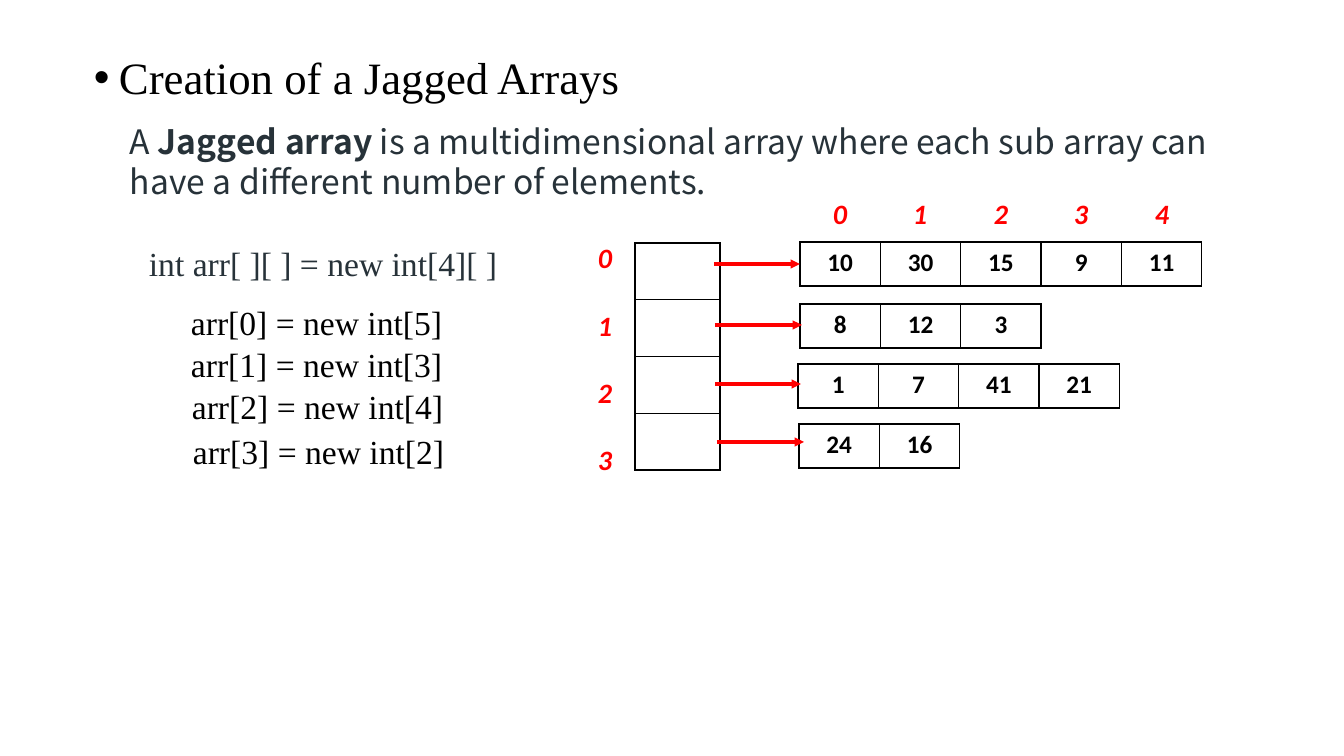
from lxml import etree
from pptx import Presentation
from pptx.dml.color import RGBColor
from pptx.enum.shapes import MSO_CONNECTOR
from pptx.enum.text import MSO_ANCHOR, PP_ALIGN
from pptx.oxml.ns import qn
from pptx.util import Emu, Pt

BLACK = RGBColor(0x00, 0x00, 0x00)
SLATE = RGBColor(0x27, 0x32, 0x39)
RED = RGBColor(0xFF, 0x00, 0x00)
SERIF = "Times New Roman"
SANS = "Noto Sans CJK JP"
LABEL = "Calibri"
CENTER = PP_ALIGN.CENTER
LEFT = PP_ALIGN.LEFT
TOP = MSO_ANCHOR.TOP
MIDDLE = MSO_ANCHOR.MIDDLE
STRAIGHT = MSO_CONNECTOR.STRAIGHT


def px(length):
    return Emu(round(length * 914400 / 100.8))


CELL_WIDTH = px(402) // 5
CELL_HEIGHT = 44
ARRAY_LEFT = 800
ROWS = [
    (["10", "30", "15", "9", "11"], 800, 242, 714, 264, 800),
    (["8", "12", "3"], 800, 304, 715, 325, 802),
    (["1", "7", "41", "21"], 798, 364, 715, 384, 801),
    (["24", "16"], 799, 424, 717, 442, 804),
]
ALLOCATIONS = [(5, 181, 297), (3, 181, 339), (4, 182, 381), (2, 183, 426)]


def write_paragraph(paragraph, runs, font=SERIF, size=24, color=BLACK,
                    italic=False, align=LEFT):
    paragraph.alignment = align
    for text, bold in runs:
        run = paragraph.add_run()
        run.text = text
        run.font.name = font
        run.font.size = Pt(size)
        run.font.color.rgb = color
        run.font.bold = bold
        run.font.italic = italic


def add_text(slide, box, paragraphs, anchor=TOP, line_spacing=None, gap=0, **style):
    shape = slide.shapes.add_textbox(*map(px, box))
    frame = shape.text_frame
    frame.word_wrap = True
    frame.vertical_anchor = anchor
    for index, runs in enumerate(paragraphs):
        paragraph = frame.add_paragraph() if index else frame.paragraphs[0]
        if line_spacing:
            paragraph.line_spacing = line_spacing
        if index:
            paragraph.space_before = Pt(gap)
        write_paragraph(paragraph, runs, **style)
    return shape


def add_title(slide, box):
    shape = add_text(slide, box, [[("Creation of a Jagged Arrays", False)]],
                     anchor=MIDDLE, line_spacing=0.9, size=32)
    properties = shape.text_frame.paragraphs[0]._p.get_or_add_pPr()
    properties.set("marL", str(px(25)))
    properties.set("indent", str(-px(25)))
    bullet_font = etree.SubElement(properties, qn("a:buFont"))
    bullet_font.set("typeface", "Arial")
    etree.SubElement(properties, qn("a:buChar")).set("char", "•")


def add_definition(slide, box):
    runs = [
        ("A ", False),
        ("Jagged array", True),
        (" is a multidimensional array where each sub array can "
         "have a different number of elements.", False),
    ]
    add_text(slide, box, [runs], line_spacing=Pt(28.8), font=SANS, color=SLATE)


def add_code(slide, box):
    add_text(slide, box, [[("int arr[ ][ ] = new int[4][ ]", False)]], color=SLATE)
    for index, (length, left, top) in enumerate(ALLOCATIONS):
        add_text(slide, (left, top, 293, 50),
                 [[(f"arr[{index}] = new int[{length}]", False)]])


def outline_cell(cell):
    cell.fill.background()
    properties = cell._tc.get_or_add_tcPr()
    for index, side in enumerate(("a:lnL", "a:lnR", "a:lnT", "a:lnB")):
        border = etree.Element(qn(side), w=str(Pt(1)))
        fill = etree.SubElement(border, qn("a:solidFill"))
        etree.SubElement(fill, qn("a:srgbClr"), val=str(BLACK))
        properties.insert(index, border)


def add_grid(slide, left, top, column_width, row_height, rows):
    row_count, column_count = len(rows), len(rows[0])
    table = slide.shapes.add_table(
        row_count, column_count, px(left), px(top),
        column_width * column_count, row_height * row_count).table
    table.first_row = False
    table.horz_banding = False
    for column in table.columns:
        column.width = column_width
    for row, values in zip(table.rows, rows):
        row.height = row_height
        for cell, value in zip(row.cells, values):
            outline_cell(cell)
            if value:
                write_paragraph(cell.text_frame.paragraphs[0], [(value, True)],
                                font=LABEL, size=18, align=CENTER)


def add_arrow(slide, start, end, y):
    arrow = slide.shapes.add_connector(STRAIGHT, px(start), px(y), px(end), px(y))
    arrow.line.color.rgb = RED
    arrow.line.width = Pt(2.25)
    etree.SubElement(arrow.line._get_or_add_ln(), qn("a:tailEnd"), type="triangle")
    etree.SubElement(arrow._element.spPr, qn("a:effectLst"))


def add_array_diagram(slide, box):
    left, top, width, height = box
    label_style = {"font": LABEL, "size": 20, "color": RED, "italic": True}
    for values, row_left, row_top, *_ in ROWS:
        add_grid(slide, row_left, row_top, CELL_WIDTH, px(CELL_HEIGHT), [values])
    add_grid(slide, left, top, px(width), px(height) // len(ROWS), [[""]] * len(ROWS))
    for _, _, _, start, y, end in ROWS:
        add_arrow(slide, start, end, y)
    for index in range(len(ROWS[0][0])):
        add_text(slide, (ARRAY_LEFT + round(index * 80.4), 192, 80, 44),
                 [[(str(index), True)]], align=CENTER, **label_style)
    add_text(slide, (left - 47, top - 7, 47, 234),
             [[(str(index), True)] for index in range(len(ROWS))],
             gap=24, **label_style)


def main():
    presentation = Presentation()
    presentation.slide_width = px(1344)
    presentation.slide_height = px(756)
    slide = presentation.slides.add_slide(presentation.slide_layouts[6])
    add_title(slide, (84, 46, 1159, 68))
    add_definition(slide, (120, 116, 1104, 92))
    add_code(slide, (139, 238, 370, 50))
    add_array_diagram(slide, (635, 243, 85, 227))
    presentation.save("out.pptx")


if __name__ == "__main__":
    main()
